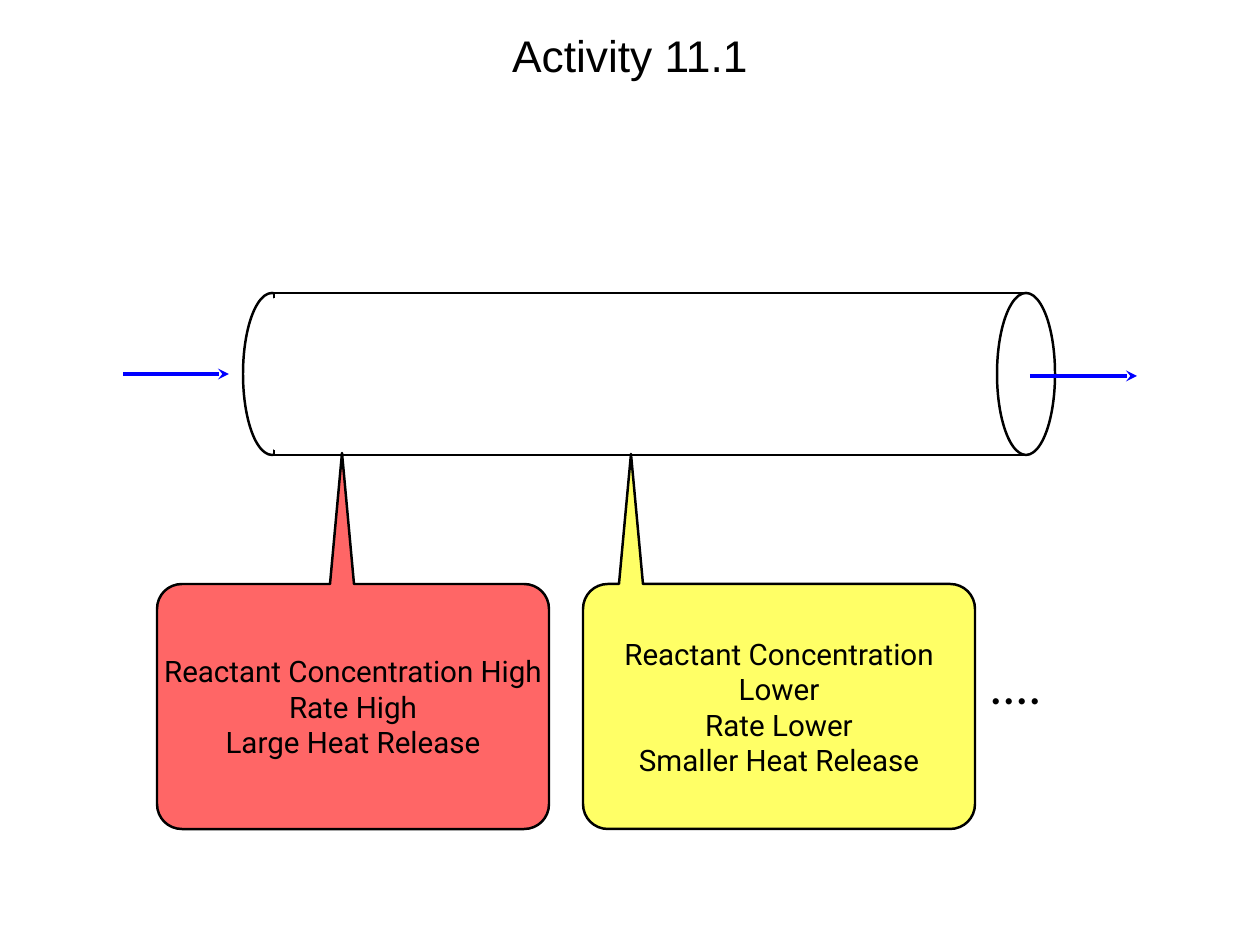
from pptx import Presentation
from pptx.dml.color import RGBColor
from pptx.enum.shapes import MSO_CONNECTOR as Connector, MSO_SHAPE as Shape
from pptx.enum.text import MSO_ANCHOR as Anchor, PP_ALIGN as Align
from pptx.oxml.ns import qn
from pptx.util import Pt
from lxml.etree import SubElement

PX = 10320
BLACK = RGBColor(0, 0, 0)
WHITE = RGBColor(255, 255, 255)
BLUE = RGBColor(0, 0, 255)
RED = RGBColor(255, 102, 102)
YELLOW = RGBColor(255, 255, 102)


def style_shape(shape, fill, line):
    shape.shadow.inherit = False
    if fill is None:
        shape.fill.background()
    else:
        shape.fill.solid()
        shape.fill.fore_color.rgb = fill
    shape.line.color.rgb = line
    shape.line.width = Pt(2)


def write_text(shape, text, font, size, anchor, wrap=True, margin=0, top=0):
    frame = shape.text_frame
    frame.text = text
    frame.word_wrap = wrap
    frame.vertical_anchor = anchor
    frame.margin_left = frame.margin_right = frame.margin_bottom = margin * PX
    frame.margin_top = top * PX
    for paragraph in frame.paragraphs:
        paragraph.alignment = Align.CENTER
        for run in paragraph.runs:
            run.font.name = font
            run.font.size = Pt(size)
            run.font.color.rgb = BLACK


presentation = Presentation()
presentation.slide_width = 1260 * PX
presentation.slide_height = 945 * PX
slide = presentation.slides.add_slide(presentation.slide_layouts[6])
shapes = slide.shapes

title = shapes.add_textbox(123 * PX, 23 * PX, 1014 * PX, 123 * PX)
write_text(title, "Activity 11.1", "Arial", 36, Anchor.TOP, margin=5, top=5)

reactor_parts = [
    (Shape.OVAL, 243, 293, 58, 162, WHITE, BLACK),
    (Shape.RECTANGLE, 274, 293, 752, 162, WHITE, BLACK),
    (Shape.OVAL, 997, 293, 58, 162, WHITE, BLACK),
    (Shape.RECTANGLE, 274, 299, 12, 150, None, WHITE),
]
for kind, left, top, width, height, fill, line in reactor_parts:
    part = shapes.add_shape(kind, left * PX, top * PX, width * PX, height * PX)
    style_shape(part, fill, line)

for start, end, y in [(1030, 1137, 376), (123, 229, 374)]:
    flow = shapes.add_connector(Connector.STRAIGHT, start * PX, y * PX, end * PX, y * PX)
    flow.line.color.rgb = BLUE
    flow.line.width = Pt(3)
    properties = flow._element.spPr
    SubElement(properties.get_or_add_ln(), qn("a:tailEnd"), type="stealth")
    SubElement(properties, qn("a:effectLst"))

BODY_TOP, BODY_BOTTOM, BODY_WIDTH = 584, 829, 392
HALF_BASE, RADIUS, HANDLE = 12, 25, 11
callouts = [
    (157, 342, 453, RED, "Reactant Concentration High\nRate High\nLarge Heat Release"),
    (583, 631, 454, YELLOW, "Reactant Concentration Lower\nRate Lower\nSmaller Heat Release"),
]
for left, tip_x, tip_y, fill, text in callouts:
    right = left + BODY_WIDTH
    corners = [
        (left, BODY_TOP, 1, 0, 0, 1),
        (left, BODY_BOTTOM, 0, -1, 1, 0),
        (right, BODY_BOTTOM, -1, 0, 0, -1),
        (right, BODY_TOP, 0, 1, -1, 0),
    ]
    points = [(tip_x - HALF_BASE, BODY_TOP)]
    for x, y, in_x, in_y, out_x, out_y in corners:
        points += [(x + in_x * reach, y + in_y * reach) for reach in (RADIUS, HANDLE)]
        points += [(x + out_x * reach, y + out_y * reach) for reach in (HANDLE, RADIUS)]
    points.append((tip_x + HALF_BASE, BODY_TOP))
    builder = shapes.build_freeform(tip_x, tip_y, scale=PX)
    builder.add_line_segments(points)
    callout = builder.convert_to_shape()
    segments = list(callout._element.iter(qn("a:lnTo")))
    for first in range(2, 17, 4):
        curve = segments[first]
        curve.tag = qn("a:cubicBezTo")
        for segment in segments[first + 1:first + 3]:
            curve.append(segment[0])
            segment.getparent().remove(segment)
    style_shape(callout, fill, BLACK)
    write_text(callout, text, "Roboto", 24, Anchor.MIDDLE, top=BODY_TOP - tip_y)

dots = shapes.add_textbox(987 * PX, 649 * PX, 57 * PX, 70 * PX)
write_text(dots, "....", "Calibri", 42, Anchor.MIDDLE, wrap=False)

presentation.save("out.pptx")
